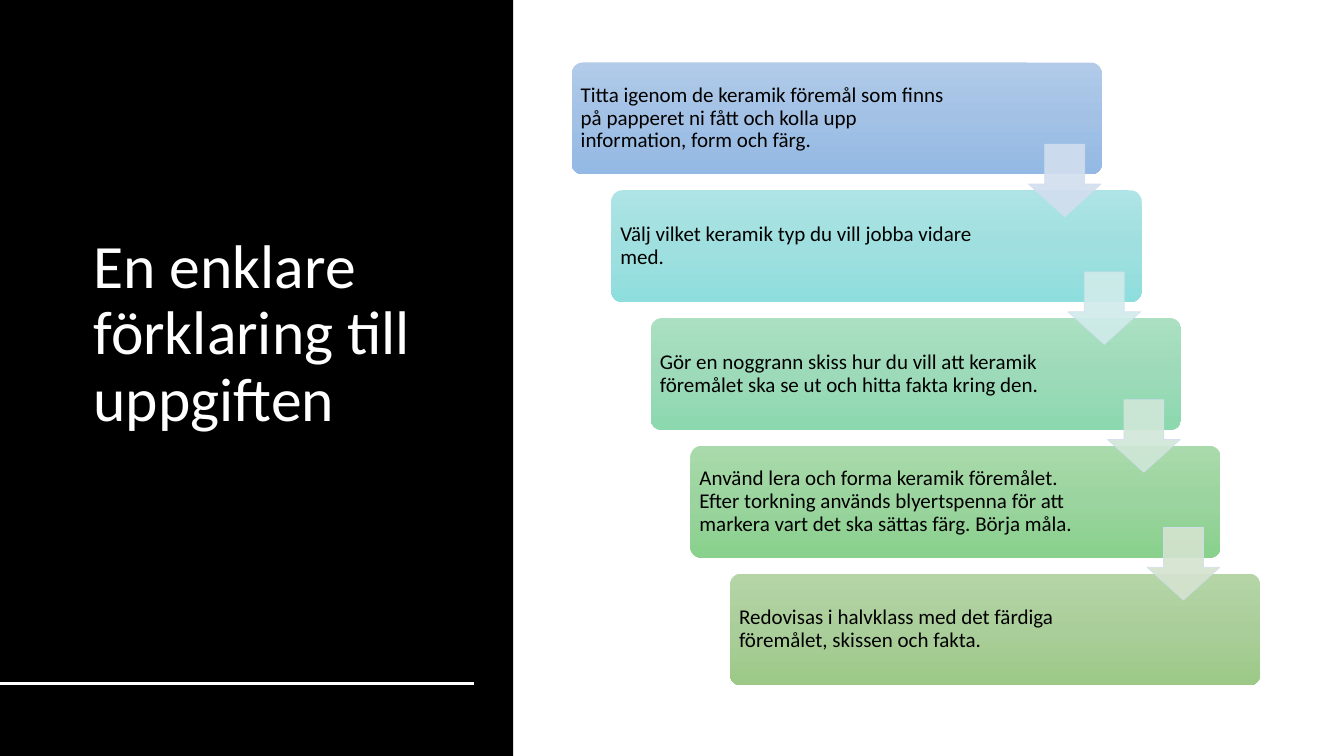
import copy
from dataclasses import dataclass

import pptx
import pptx.util
import pptx.dml.color
import pptx.enum.shapes
import pptx.enum.text
import pptx.oxml
import pptx.oxml.ns

Inches, Pt = pptx.util.Inches, pptx.util.Pt
SHAPE = pptx.enum.shapes.MSO_SHAPE
MIDDLE = pptx.enum.text.MSO_ANCHOR.MIDDLE
qn = pptx.oxml.ns.qn


@dataclass(frozen=True)
class Theme:
    font: str = "Calibri"
    title: int = 44
    body: int = 15
    dark: str = "000000"
    light: str = "FFFFFF"
    edge: str = "D2DEEF"
    steps: tuple = (
        ("B1CBE9", "A3C1E5", "93B9E4"),
        ("AEE4E5", "A0DFDF", "8FDEDE"),
        ("ABE0C3", "9DDAB9", "8CD8AF"),
        ("A9DAAB", "9BD49E", "89D18C"),
        ("B5D5A7", "AACE9A", "9CC987"),
    )
    arrows: tuple = ("D2DEEF", "D0ECEA", "D0E7D8", "D5E3CF")


THEME = Theme()

# Text of each step and the width of its text box
STEPS = [
    ("Titta igenom de keramik föremål som finns på papperet ni fått "
     "och kolla upp information, form och färg.", 3.93),
    ("Välj vilket keramik typ du vill jobba vidare med.", 4.08),
    ("Gör en noggrann skiss hur du vill att keramik föremålet ska se ut "
     "och hitta fakta kring den.", 4.08),
    ("Använd lera och forma keramik föremålet. Efter torkning används "
     "blyertspenna för att markera vart det ska sättas färg. Börja måla.", 4.08),
    ("Redovisas i halvklass med det färdiga föremålet, skissen och fakta.", 4.08),
]


def color(code):
    return pptx.dml.color.RGBColor.from_string(code)


def add_shape(slide, kind, x, y, w, h):
    shape = slide.shapes.add_shape(kind, Inches(x), Inches(y), Inches(w), Inches(h))
    shape.shadow.inherit = False
    shape.line.fill.background()
    return shape


def add_text(slide, text, x, y, w, h, size, ink, inset=None):
    box = slide.shapes.add_textbox(Inches(x), Inches(y), Inches(w), Inches(h))
    frame = box.text_frame
    frame.word_wrap = True
    frame.vertical_anchor = MIDDLE
    if inset is not None:
        frame.margin_left = frame.margin_right = Inches(inset)
        frame.margin_top = frame.margin_bottom = Inches(inset)
    frame.text = text
    para = frame.paragraphs[0]
    para.line_spacing = 0.9
    font = para.runs[0].font
    font.name, font.size = THEME.font, Pt(size)
    font.color.rgb = color(ink)


def shade(shape, codes):
    """Fill with a vertical gradient of three evenly spaced colours."""
    shape.fill.gradient()
    shape.fill.gradient_angle = 270
    first = shape._element.spPr.find(".//" + qn("a:gs"))
    first.addnext(copy.deepcopy(first))
    for i, (stop, code) in enumerate(zip(shape.fill.gradient_stops, codes)):
        stop.position = i / 2
        stop.color.rgb = color(code)


def fade(fill, code, alpha):
    """Set a solid colour with the given opacity in percent."""
    fill.solid()
    fill.fore_color.rgb = color(code)
    node = fill._xPr.find(".//" + qn("a:srgbClr"))
    node.append(node.makeelement(qn("a:alpha"), {"val": str(alpha * 1000)}))


def add_panel(slide, x, y, w, h):
    # Dark background
    panel = add_shape(slide, SHAPE.RECTANGLE, x, y, w, h)
    panel.fill.solid()
    panel.fill.fore_color.rgb = color(THEME.dark)
    # Title
    add_text(slide, "En enklare förklaring till uppgiften",
             x + 0.83, y + 0.61, 3.9, 5.42, THEME.title, THEME.light)
    # Rule below the title
    level = Inches(y + 6.78)
    rule = slide.shapes.add_connector(
        pptx.enum.shapes.MSO_CONNECTOR.STRAIGHT,
        Inches(x), level, Inches(x + 4.7), level)
    rule.line.color.rgb = color(THEME.light)
    rule.line.width = Pt(2)
    props = rule._element.spPr
    props.append(props.makeelement(qn("a:effectLst"), {}))


def add_stairs(slide, x, y, w, h):
    wide, high, arrow = 5.26, 1.11, 0.72
    count = len(STEPS)
    dx, dy = (w - wide) / (count - 1), (h - high) / (count - 1)
    spots = [(x + i * dx, y + i * dy) for i in range(count)]

    # Steps
    for (left, top), (text, span), codes in zip(spots, STEPS, THEME.steps):
        step = add_shape(slide, SHAPE.ROUNDED_RECTANGLE, left, top, wide, high)
        step.adjustments[0] = 0.1
        shade(step, codes)
        add_text(slide, text, left + 0.03, top + 0.03, span, high - 0.06,
                 THEME.body, THEME.dark, 0.06)

    # Arrows from each step to the next
    for (left, top), code in zip(spots, THEME.arrows):
        mark = add_shape(slide, SHAPE.DOWN_ARROW, left + wide - arrow - 0.01,
                         top + 0.81, arrow, arrow)
        mark.adjustments[0], mark.adjustments[1] = 0.55, 0.45
        fade(mark.fill, code, 90)
        fade(mark.line.fill, THEME.edge, 90)
        mark.line.width = Pt(0.5)


def main():
    deck = pptx.Presentation()
    deck.slide_width, deck.slide_height = Inches(13.33), Inches(7.5)
    slide = deck.slides.add_slide(deck.slide_layouts[6])
    add_panel(slide, 0, 0, 5.09, 7.5)
    add_stairs(slide, 5.67, 0.62, 6.83, 6.18)
    deck.save("out.pptx")


if __name__ == "__main__":
    main()
